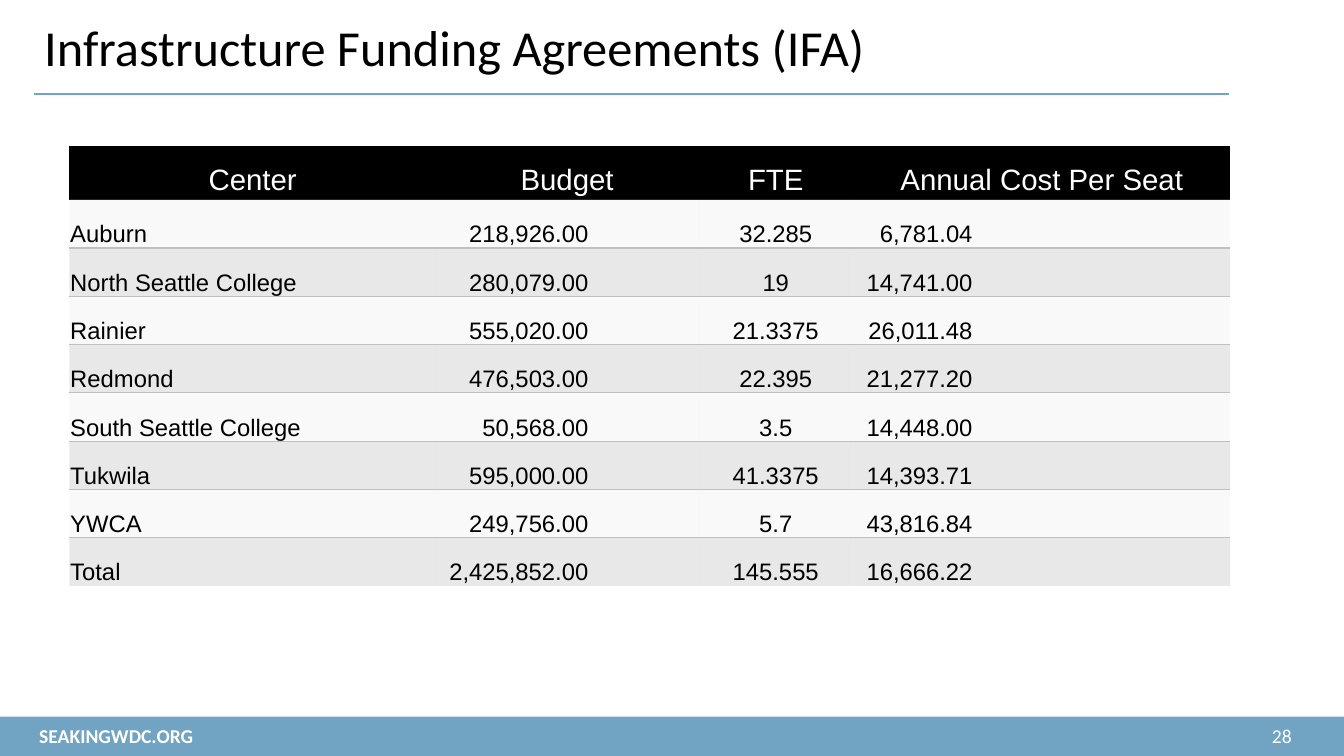
from lxml.etree import SubElement
from pptx import Presentation
from pptx.dml.color import RGBColor
from pptx.enum.shapes import MSO_CONNECTOR as LineKind, MSO_SHAPE as Shape
from pptx.enum.text import MSO_ANCHOR as Anchor, PP_ALIGN as Align
from pptx.oxml import parse_xml
from pptx.oxml.ns import nsdecls, qn
from pptx.util import Pt

COLORS = {
    "blue": "71A3C2",
    "white": "FFFFFF",
    "black": "000000",
    "light": "F2F2F2",
    "gray": "BFBFBF",
}
PLAIN_TABLE = "{2D5ABB26-0587-4C30-8999-92F81FD0307C}"

HEADINGS = ["Center", "Budget", "FTE", "Annual Cost Per Seat"]
CENTERS = [
    ["Auburn", "218,926.00", "32.285", "6,781.04"],
    ["North Seattle College", "280,079.00", "19", "14,741.00"],
    ["Rainier", "555,020.00", "21.3375", "26,011.48"],
    ["Redmond", "476,503.00", "22.395", "21,277.20"],
    ["South Seattle College", "50,568.00", "3.5", "14,448.00"],
    ["Tukwila", "595,000.00", "41.3375", "14,393.71"],
    ["YWCA", "249,756.00", "5.7", "43,816.84"],
    ["Total", "2,425,852.00", "145.555", "16,666.22"],
]
COLUMN_WIDTHS = [262, 187.2, 110.9, 269.2]
COLUMN_ALIGNS = [Align.LEFT, Align.RIGHT, Align.CENTER, Align.RIGHT]
RIGHT_INSETS = [0.7, 78.3, 0.7, 184]
HEADER_HEIGHT, ROW_HEIGHT = 38.2, 34.5


def rgb(name):
    return RGBColor.from_string(COLORS[name])


class SlideBuilder:
    def __init__(self, slide, text_font="Calibri", table_font="Arial"):
        self.slide = slide
        self.text_font = text_font
        self.table_font = table_font

    def style(self, paragraph, font_name, size, color, bold=False):
        for run in paragraph.runs:
            run.font.name = font_name
            run.font.size = Pt(size)
            run.font.bold = bold
            run.font.color.rgb = rgb(color)

    def bar(self, left, top, width, height, color):
        band = self.slide.shapes.add_shape(
            Shape.RECTANGLE, Pt(left), Pt(top), Pt(width), Pt(height))
        band.shadow.inherit = False
        band.fill.solid()
        band.fill.fore_color.rgb = rgb(color)
        band.line.fill.background()

    def rule(self, left, right, y, color, weight):
        divider = self.slide.shapes.add_connector(
            LineKind.STRAIGHT, Pt(left), Pt(y), Pt(right), Pt(y))
        divider.line.color.rgb = rgb(color)
        divider.line.width = Pt(weight)
        SubElement(divider._element.spPr, qn("a:effectLst"))

    def text(self, words, left, top, width, height, size, color, bold=False, spacing=1.0):
        frame = self.slide.shapes.add_textbox(
            Pt(left), Pt(top), Pt(width), Pt(height)).text_frame
        frame.word_wrap = True
        frame.vertical_anchor = Anchor.MIDDLE
        frame.text = words
        frame.paragraphs[0].line_spacing = spacing
        self.style(frame.paragraphs[0], self.text_font, size, color, bold)

    def cell(self, cell, words, size, color, fill, align, anchor, right=0.7, alpha=100):
        cell.text = words
        cell.vertical_anchor = anchor
        cell.margin_left, cell.margin_right = Pt(0.7), Pt(right)
        cell.margin_top, cell.margin_bottom = Pt(10.8), Pt(0)
        cell.fill.solid()
        cell.fill.fore_color.rgb = rgb(fill)
        if alpha < 100:
            tint = cell._tc.tcPr.find(qn("a:solidFill"))[0]
            SubElement(tint, qn("a:alpha")).set("val", str(alpha * 1000))
        paragraph = cell.text_frame.paragraphs[0]
        paragraph.alignment = align
        self.style(paragraph, self.table_font, size, color)

    def border(self, cell, side, color, weight):
        cell._tc.tcPr.insert(0, parse_xml(
            f'<a:{side} {nsdecls("a")} w="{Pt(weight)}"><a:solidFill>'
            f'<a:srgbClr val="{COLORS[color]}"/></a:solidFill></a:{side}>'))

    def budget_table(self, left, top):
        height = HEADER_HEIGHT + ROW_HEIGHT * len(CENTERS)
        table = self.slide.shapes.add_table(
            len(CENTERS) + 1, len(HEADINGS), Pt(left), Pt(top),
            Pt(sum(COLUMN_WIDTHS)), Pt(height)).table
        table.horz_banding = False
        table._tbl.tblPr.find(qn("a:tableStyleId")).text = PLAIN_TABLE
        for column, width in zip(table.columns, COLUMN_WIDTHS):
            column.width = Pt(width)
        for row in table.rows:
            row.height = Pt(ROW_HEIGHT)
        table.rows[0].height = Pt(HEADER_HEIGHT)

        for col, heading in enumerate(HEADINGS):
            self.cell(table.cell(0, col), heading, 21, "white", "black",
                      Align.CENTER, Anchor.MIDDLE)
        for row, center in enumerate(CENTERS, start=1):
            fill, alpha, side = ("light", 45, "lnB") if row % 2 else ("gray", 35, "lnT")
            for col, value in enumerate(center):
                cell = table.cell(row, col)
                self.cell(cell, value, 17, "black", fill, COLUMN_ALIGNS[col],
                          Anchor.BOTTOM, RIGHT_INSETS[col], alpha)
                self.border(cell, side, "gray", 1)


def main():
    deck = Presentation()
    deck.slide_width, deck.slide_height = Pt(960), Pt(540)
    page = SlideBuilder(deck.slides.add_slide(deck.slide_layouts[6]))
    page.bar(0, 511.9, 960, 28.1, "blue")
    page.text("28", 901.4, 513.4, 37.6, 24.2, 14, "white")
    page.rule(24.5, 877.7, 67, "blue", 1.5)
    page.text("SEAKINGWDC.ORG", 20.9, 513.4, 141, 24.2, 14, "white", bold=True)
    page.text("Infrastructure Funding Agreements (IFA)", 24.5, 8.6, 869, 54,
              36, "black", spacing=0.9)
    page.budget_table(49.5, 104.4)
    deck.save("out.pptx")


if __name__ == "__main__":
    main()
